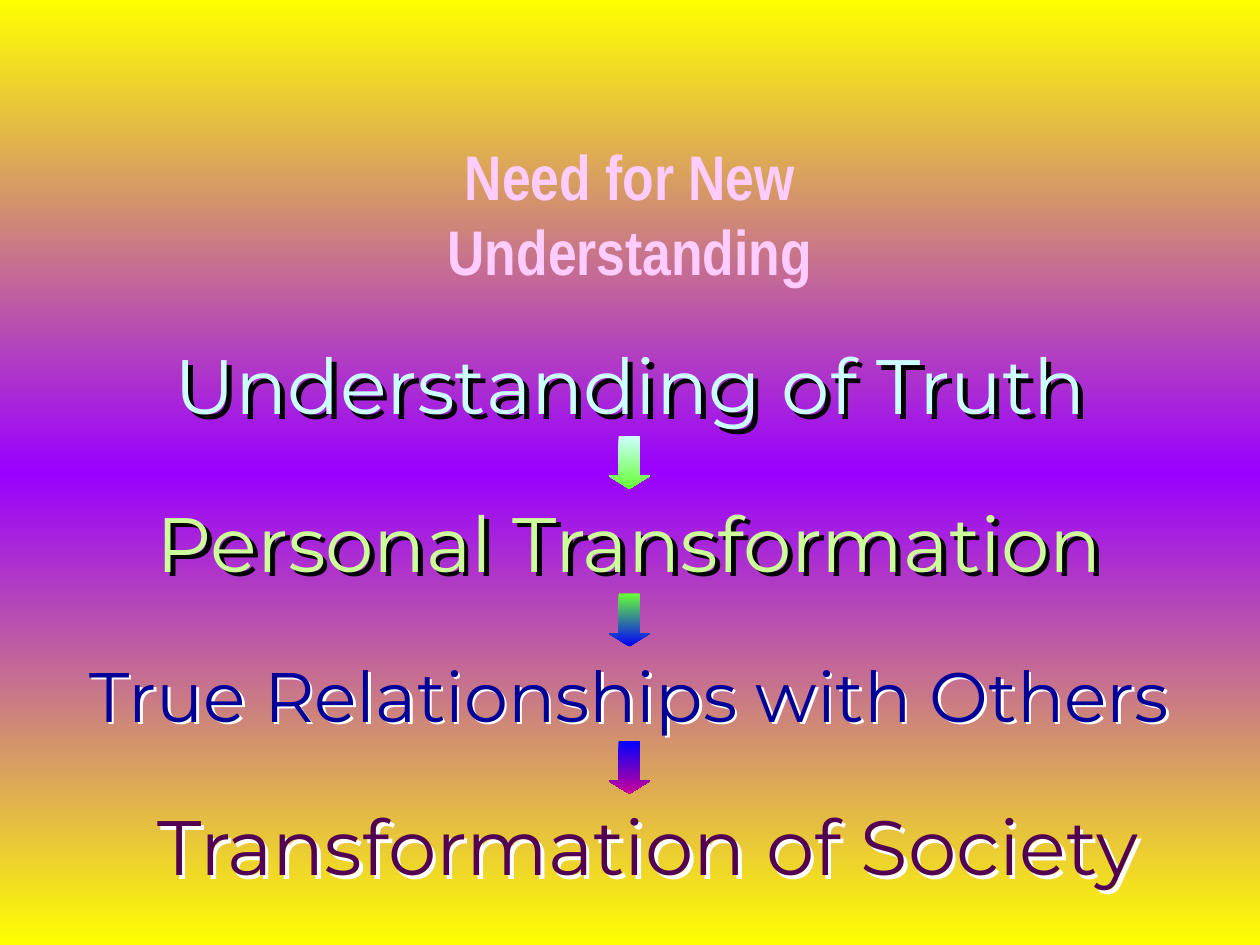
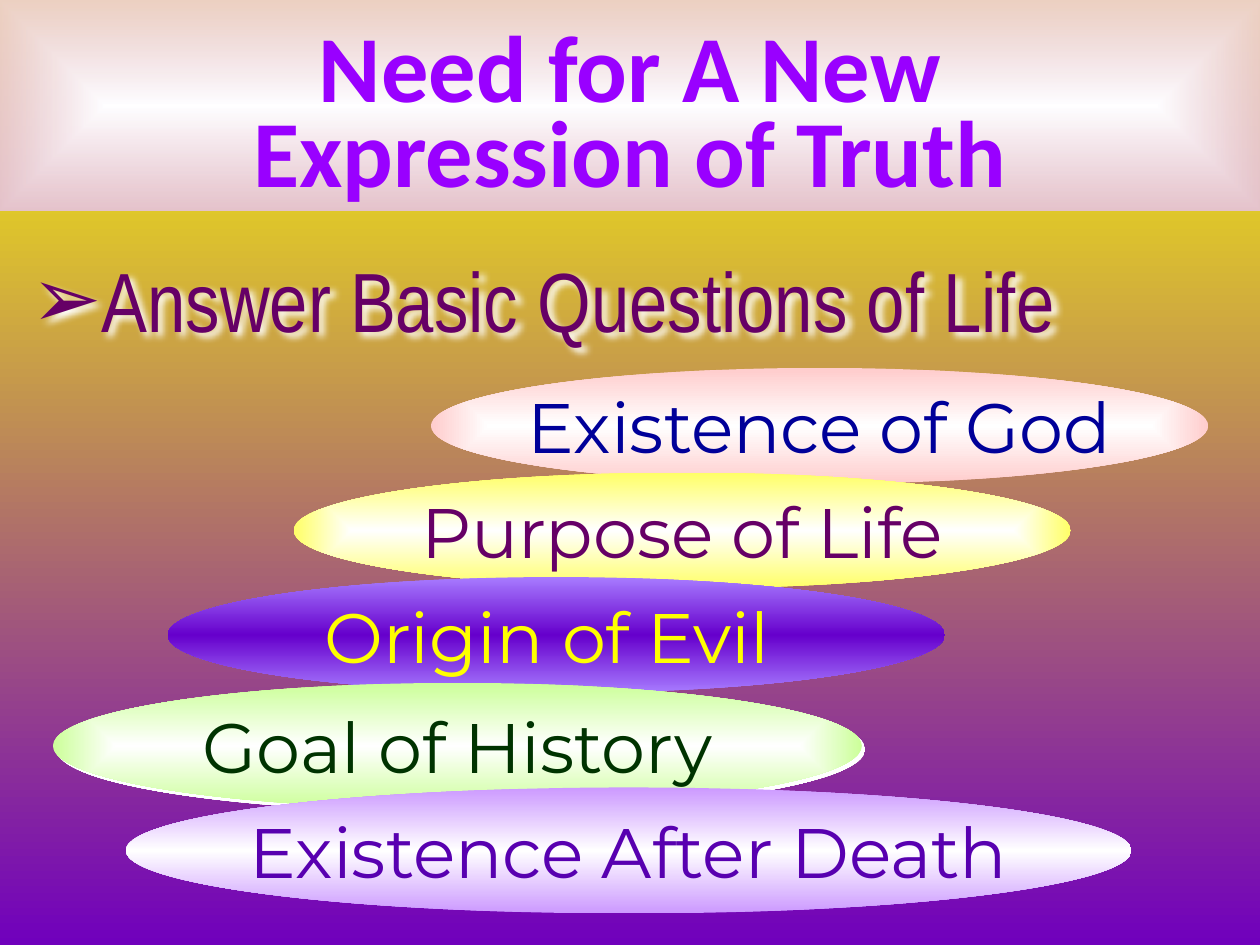
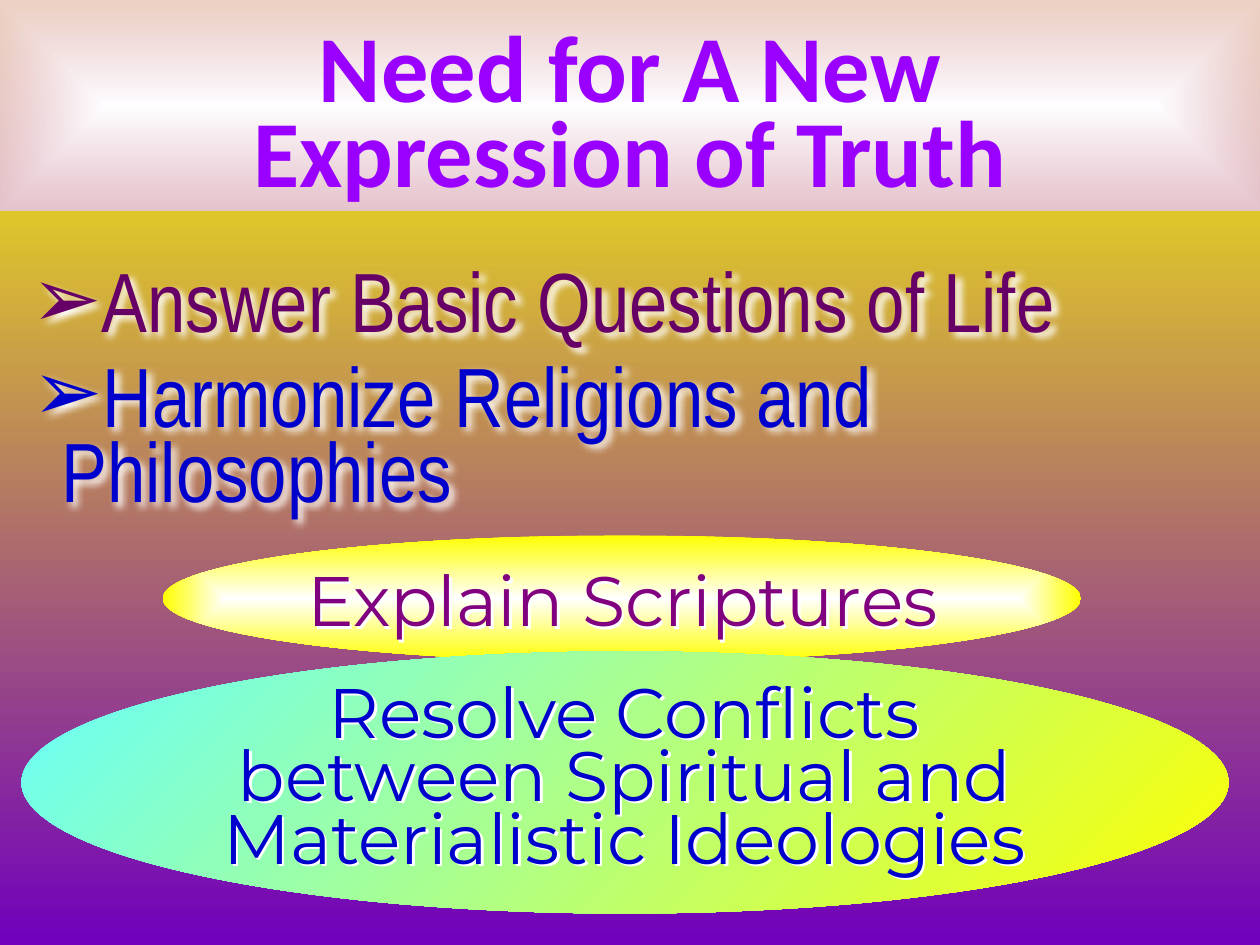
"""Build three slides on the need for a new understanding and expression of truth."""
from pptx import Presentation
from pptx.dml.color import RGBColor
from pptx.enum.shapes import MSO_SHAPE as Shape
from pptx.enum.text import MSO_ANCHOR as Anchor, MSO_AUTO_SIZE as AutoSize, PP_ALIGN as Align
from pptx.oxml.ns import qn
from pptx.util import Inches, Pt
from lxml.etree import SubElement, Element

BLACK = RGBColor(0x00, 0x00, 0x00)
WHITE = RGBColor(0xFF, 0xFF, 0xFF)
YELLOW = RGBColor(0xFF, 0xFF, 0x00)
SOFT_YELLOW = RGBColor(0xFF, 0xFF, 0x66)
VIOLET = RGBColor(0x99, 0x00, 0xFF)
DEEP_VIOLET = RGBColor(0x70, 0x00, 0xBC)
TEXT_VIOLET = RGBColor(0x58, 0x00, 0xB0)
STRONG_VIOLET = RGBColor(0x66, 0x00, 0xCC)
SOFT_VIOLET = RGBColor(0xA7, 0x7B, 0xFF)
LILAC = RGBColor(0xCC, 0x99, 0xFF)
PALE_LILAC = RGBColor(0xE6, 0xC1, 0xFF)
NIGHT = RGBColor(0x21, 0x00, 0x42)
PINK = RGBColor(0xFF, 0xCC, 0xFF)
ROSE = RGBColor(0xFF, 0xCC, 0xCC)
MAGENTA = RGBColor(0xCC, 0x00, 0x99)
PURPLE = RGBColor(0x80, 0x00, 0x80)
PLUM = RGBColor(0x66, 0x00, 0x66)
DARK_PLUM = RGBColor(0x52, 0x00, 0x52)
BLUE = RGBColor(0x00, 0x00, 0xFF)
MID_BLUE = RGBColor(0x00, 0x00, 0xCC)
NAVY = RGBColor(0x00, 0x00, 0x99)
ICE = RGBColor(0xCC, 0xFF, 0xFF)
AQUA = RGBColor(0x66, 0xFF, 0xFF)
LIME = RGBColor(0xCC, 0xFF, 0x99)
GREEN = RGBColor(0x66, 0xFF, 0x33)
FOREST = RGBColor(0x00, 0x33, 0x00)

NARROW, SANS, ROUND = "Arial Narrow", "Calibri", "Montserrat"

STEPS = [
    ("Understanding of Truth", (0.92, 2.63, 8.17, 0.83), 44, ICE, (BLACK, 4)),
    ("Personal Transformation", (0.62, 3.88, 8.75, 0.83), 44, LIME, (BLACK, 4)),
    ("True Relationships with Others", (0.08, 5.13, 9.83, 0.77), 40, NAVY, (WHITE, 2)),
    ("Transformation of Society", (0.54, 6.29, 9.21, 0.83), 44, DARK_PLUM, (WHITE, 2.8)),
]
ARROWS = [(3.46, ICE, GREEN), (4.71, GREEN, BLUE), (5.88, BLUE, MAGENTA)]
NEED_TITLE = ["Need for New", "Understanding"]
TRUTH_TITLE = ["Need for A New", "Expression of Truth"]
ANSWER = ("Answer Basic Questions of Life", (0.15, 1.92, 9.1, 0.9), PLUM, False, 1)
HARMONIZE = ("Harmonize Religions and Philosophies", (0.16, 2.86, 7.92, 1.3), MID_BLUE, True, 0.75)
QUESTIONS = [
    ("Existence of God", (3.42, 2.92, 6.17, 0.92), NAVY, (WHITE, ROSE), "shape", None),
    ("Purpose of Life", (2.33, 3.75, 6.17, 0.92), PLUM, (WHITE, SOFT_YELLOW), "shape", None),
    ("Origin of Evil ", (1.33, 4.58, 6.17, 0.92), YELLOW,
     (SOFT_VIOLET, STRONG_VIOLET, SOFT_VIOLET), 90, None),
    ("Goal of History", (0.42, 5.42, 6.42, 1), FOREST, (WHITE, LIME), "shape", (WHITE, 2.8)),
    ("Existence After Death", (1, 6.25, 7.98, 1), TEXT_VIOLET, (LILAC, WHITE, LILAC), 90, None),
]
TASKS = [
    (["Explain Scriptures"], (1.71, 4.37, 6.46, 0.77), PURPLE, 1, (BLACK, 0.25),
     (1.29, 4.25, 7.29, 1), (WHITE, YELLOW), "shape"),
    (["Resolve Conflicts", "between Spiritual and", "Materialistic Ideologies"],
     (1.12, 5.41, 7.67, 1.6), MID_BLUE, 0.75, None,
     (0.17, 5.17, 9.58, 2.08), (AQUA, YELLOW), 45),
]


def add_color(parent, color, alpha=100):
    node = SubElement(parent, qn("a:srgbClr"), val=str(color))
    if alpha < 100:
        SubElement(node, qn("a:alpha"), val=str(alpha * 1000))


def paint(fill, holder, colors, course, end_alpha=100):
    """Give a fill evenly spaced stops along an angle or a named path."""
    fill.solid()
    gradient = Element(qn("a:gradFill"), rotWithShape="1")
    stops = SubElement(gradient, qn("a:gsLst"))
    last = len(colors) - 1
    for index, color in enumerate(colors):
        stop = SubElement(stops, qn("a:gs"), pos=str(100000 * index // last))
        add_color(stop, color, end_alpha if index == last else 100)
    if isinstance(course, str):
        route = SubElement(gradient, qn("a:path"), path=course)
        SubElement(route, qn("a:fillToRect"), **dict.fromkeys("ltrb", "50000"))
    else:
        SubElement(gradient, qn("a:lin"), ang=str(course * 60000), scaled="0")
    holder.replace(holder.find(qn("a:solidFill")), gradient)


def cast_shadow(shape, color, distance, blur=0):
    shape.shadow.inherit = False
    effects = shape.element.spPr.find(qn("a:effectLst"))
    shadow = SubElement(effects, qn("a:outerShdw"), blurRad=str(Pt(blur)),
                        dist=str(Pt(distance)), dir="2700000", algn="ctr", rotWithShape="0")
    add_color(shadow, color)


def add_shape(shapes, kind, place, colors, course, end_alpha=100):
    shape = shapes.add_shape(kind, *map(Inches, place))
    shape.shadow.inherit = False
    shape.line.fill.background()
    paint(shape.fill, shape.element.spPr, colors, course, end_alpha)
    return shape


def write(shape, lines, font, outline=None, spacing=1, align=Align.CENTER, **frame_format):
    """Write one paragraph a line and return the paragraphs."""
    frame = shape.text_frame
    for name, value in frame_format.items():
        setattr(frame, name, value)
    paras = [frame.paragraphs[0]] + [frame.add_paragraph() for _ in lines[1:]]
    for para, line in zip(paras, lines):
        para.alignment, para.line_spacing = align, spacing
        span = para.add_run()
        span.text = line
        for name, value in font.items():
            if name == "color":
                span.font.color.rgb = value
            else:
                setattr(span.font, name, value)
        if outline:
            color, width = outline
            edge = Element(qn("a:ln"), w=str(Pt(width)))
            add_color(SubElement(edge, qn("a:solidFill")), color)
            span.font._element.insert(0, edge)
    return paras


def add_text(shapes, place, lines, font, outline=None, **layout):
    box = shapes.add_textbox(*map(Inches, place))
    options = {"word_wrap": True, "auto_size": AutoSize.SHAPE_TO_FIT_TEXT} | layout
    return box, write(box, lines, font, outline, **options)


def type_style(name, size, color, bold=False):
    return {"name": name, "size": Pt(size), "color": color, "bold": bold}


def add_page(deck, colors):
    page = deck.slides.add_slide(deck.slide_layouts[6])
    fill = page.background.fill
    fill.solid()
    paint(fill, page.element.find(".//" + qn("p:bgPr")), colors, 90)
    return page


def add_truth_page(deck):
    page = add_page(deck, (YELLOW, DEEP_VIOLET))
    add_shape(page.shapes, Shape.RECTANGLE, (0, 0, 10, 1.67), (WHITE, PALE_LILAC), "rect", 75)
    add_text(page.shapes, (0, 0.11, 10, 1.57), TRUTH_TITLE, type_style(SANS, 54, VIOLET, True),
             (BLACK, 0.25), spacing=0.75, vertical_anchor=Anchor.MIDDLE, margin_top=Inches(0.15))
    add_bullet(page, *ANSWER)
    return page


def add_bullet(page, text, place, color, wrap, spacing):
    box, (para,) = add_text(page.shapes, place, [text], type_style(NARROW, 48, color),
                            (WHITE, 0.25), spacing=spacing, align=Align.LEFT,
                            word_wrap=wrap, vertical_anchor=Anchor.MIDDLE)
    cast_shadow(box, WHITE, 3, 4)
    indent = Inches(0.23)
    props = para._p.get_or_add_pPr()
    props.set("marL", str(indent))
    props.set("indent", str(-indent))
    add_color(SubElement(props, qn("a:buClr")), color)
    SubElement(props, qn("a:buFont"), typeface="Arial")
    SubElement(props, qn("a:buChar"), char="➢")


def build_need(deck):
    page = add_page(deck, (YELLOW, VIOLET, YELLOW))
    for text, place, size, color, shadow in STEPS:
        outline = (BLACK, 0.25) if shadow[0] == BLACK else None
        box, _ = add_text(page.shapes, place, [text], type_style(ROUND, size, color), outline)
        cast_shadow(box, *shadow)
    _, paras = add_text(page.shapes, (0.46, 1.04, 9.08, 1.33), NEED_TITLE,
                        type_style(NARROW, 36, PINK, True), (NIGHT, 3),
                        word_wrap=False, auto_size=AutoSize.NONE)
    for para in paras:
        font = para.runs[0].font
        paint(font.fill, font._element, (PINK, WHITE), "rect")
    for top, start, end in ARROWS:
        arrow = add_shape(page.shapes, Shape.DOWN_ARROW, (4.83, top, 0.33, 0.42), (start, end), 90)
        arrow.adjustments[1] = 0.31


def build_questions(deck):
    page = add_truth_page(deck)
    for text, place, color, colors, course, shadow in QUESTIONS:
        oval = add_shape(page.shapes, Shape.OVAL, place, colors, course)
        if shadow:
            cast_shadow(oval, *shadow)
        write(oval, [text], type_style(ROUND, 40, color), (BLACK, 0.25),
              word_wrap=False, vertical_anchor=Anchor.MIDDLE)


def build_tasks(deck):
    page = add_truth_page(deck)
    add_bullet(page, *HARMONIZE)
    for lines, place, color, spacing, outline, oval_place, colors, course in TASKS:
        group = page.shapes.add_group_shape()
        add_shape(group.shapes, Shape.OVAL, oval_place, colors, course)
        box, _ = add_text(group.shapes, place, lines, type_style(ROUND, 40, color),
                          outline, spacing=spacing)
        cast_shadow(box, WHITE, 2)


def main():
    deck = Presentation()
    deck.slide_width, deck.slide_height = Inches(10), Inches(7.5)
    for build in (build_need, build_questions, build_tasks):
        build(deck)
    deck.save("out.pptx")


if __name__ == "__main__":
    main()
